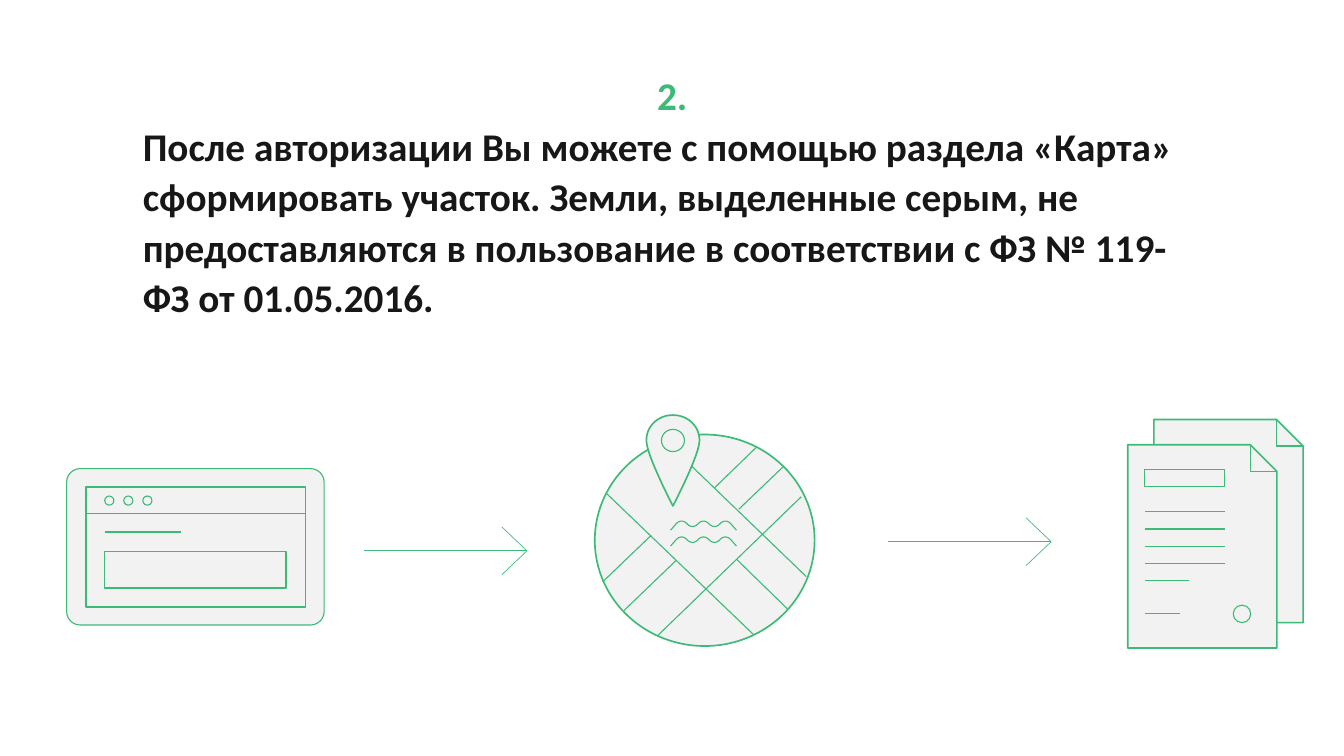
from lxml.etree import SubElement
from pptx import Presentation
from pptx.dml.color import RGBColor as RGB
from pptx.enum.shapes import MSO_CONNECTOR as Connector, MSO_SHAPE as Shape
from pptx.enum.text import MSO_AUTO_SIZE as AutoSize, PP_ALIGN as Align
from pptx.oxml.ns import qn
from pptx.util import Cm, Pt

THEME = {
    "green": RGB.from_string("3DBA78"),
    "ink": RGB.from_string("181717"),
    "paper": RGB.from_string("F2F2F2"),
    "font": {"name": "Calibri", "size": Pt(28), "bold": True},
    "hair": Pt(0.48),
    "thin": Pt(0.8),
    "medium": Pt(1.2),
}

SLIDE_SIZE = (33.87, 19.05)
STEP_FRAME = (3.35, 1.6, 27.18, 6.65)
STEP_TEXT = [
    ("2.", "green", Align.CENTER),
    (
        "После авторизации Вы можете с помощью раздела «Карта» сформировать участок. "
        "Земли, выделенные серым, не предоставляются в пользование в соответствии "
        "с ФЗ № 119-ФЗ от 01.05.2016.",
        "ink",
        Align.LEFT,
    ),
]

BROWSER = {
    "screen": (1.68, 11.81, 6.49, 3.94),
    "corner": 0.34,
    "window": (2.16, 12.27, 5.54, 3.02),
    "bar_height": 0.68,
    "buttons": (2.64, 12.5, 0.23),
    "button_step": 0.48,
    "button_count": 3,
    "label": (2.64, 13.41, 4.57, 13.41),
    "field": (2.64, 13.89, 4.57, 0.93),
}

MAP = {
    "globe": (14.99, 10.95, 5.54, 5.33),
    "roads": [
        (16.79, 11.13, 20.32, 14.53),
        (15.27, 12.42, 19, 16),
        (16.56, 16.03, 20.19, 12.52),
        (18.01, 12.29, 19.05, 11.28),
        (16.41, 13.49, 15.19, 14.66),
        (17.04, 14.12, 15.72, 15.39),
        (18.57, 14.1, 19.84, 15.34),
        (18.62, 12.83, 19.74, 11.76),
    ],
    "pin": {"x": 16.96, "top": 10.46, "shoulder": 11.1, "tip": 12.75, "half": 0.67},
    "hole": (16.67, 10.82, 0.58, 0.56),
    "wave": {"left": 17.04, "right": 18.42, "arcs": 5, "tail": 0.14, "drop": 0.16},
    "wave_levels": [13.2, 13.6],
}

DOCUMENT = {
    "sheets": [(29.08, 10.57), (28.42, 11.21)],
    "size": (3.76, 5.12),
    "fold": 0.67,
    "heading": (28.85, 11.84, 2.01, 0.43),
    "first_line": 12.9,
    "line_step": 0.43,
    "line_widths": [2.01, 2.01, 2.01, 2.01, 1.12],
    "signature": (28.85, 15.47, 29.74, 15.47),
    "seal": (31.08, 15.25, 0.44, 0.44),
}

ARROWS = [(9.18, 13.88), (22.39, 13.65)]
ARROW_LENGTH, HEAD_LENGTH, HEAD_HALF = 4.1, 0.63, 0.6


def paint(part, weight, fill=None):
    part.shadow.inherit = False
    part.line.color.rgb = THEME["green"]
    part.line.width = THEME[weight]
    if fill:
        part.fill.solid()
        part.fill.fore_color.rgb = THEME[fill]
    else:
        part.fill.background()
    return part


def draw_shape(icon, kind, frame, weight="thin", fill=None):
    return paint(icon.add_shape(kind, *map(Cm, frame)), weight, fill)


def draw_line(icon, ends, weight="thin"):
    stroke = icon.add_connector(Connector.STRAIGHT, *map(Cm, ends))
    stroke.line.color.rgb = THEME["green"]
    stroke.line.width = THEME[weight]
    SubElement(stroke._element.spPr, qn("a:effectLst"))


def draw_outline(icon, points, weight="thin", fill=None, close=False):
    start, *rest = [(Cm(x), Cm(y)) for x, y in points]
    builder = icon.build_freeform(*start, scale=1.0)
    builder.add_line_segments(rest, close=close)
    paint(builder.convert_to_shape(), weight, fill)


def curve(a, b, c, d, steps=12):
    times = [i / steps for i in range(1, steps + 1)]
    return [
        tuple(
            (1 - t) ** 3 * p + 3 * (1 - t) ** 2 * t * q + 3 * (1 - t) * t**2 * r + t**3 * s
            for p, q, r, s in zip(a, b, c, d)
        )
        for t in times
    ]


def pin_points(x, top, shoulder, tip, half):
    bend = half * 0.55
    right = curve((x, top), (x + bend, top), (x + half, shoulder - bend), (x + half, shoulder))
    right += curve((x + half, shoulder), (x + half, shoulder + bend), (x, tip), (x, tip))
    left = [(2 * x - px, py) for px, py in reversed(right[:-1])]
    return [(x, top)] + right + left


def wave_points(level, left, right, arcs, tail, drop):
    step = (right - left) / arcs
    points = [(left - tail, level + drop), (left, level)]
    for i in range(arcs):
        x = left + i * step
        bend = level + (0.09 if i % 2 else -0.09)
        points += curve((x, level), (x + 0.3 * step, bend), (x + 0.7 * step, bend), (x + step, level))
    return points + [(right + tail, level + drop)]


def draw_step(slide):
    frame = slide.shapes.add_textbox(*map(Cm, STEP_FRAME)).text_frame
    frame.word_wrap = True
    frame.auto_size = AutoSize.SHAPE_TO_FIT_TEXT
    for i, (wording, colour, align) in enumerate(STEP_TEXT):
        paragraph = frame.add_paragraph() if i else frame.paragraphs[0]
        paragraph.alignment = align
        paragraph.line_spacing = 1.07
        run = paragraph.add_run()
        run.text = wording
        for attribute, value in THEME["font"].items():
            setattr(run.font, attribute, value)
        run.font.color.rgb = THEME[colour]


def draw_browser(icon):
    screen = draw_shape(icon, Shape.ROUNDED_RECTANGLE, BROWSER["screen"], fill="paper")
    screen.adjustments[0] = BROWSER["corner"] / BROWSER["screen"][3]
    draw_shape(icon, Shape.RECTANGLE, BROWSER["window"], "medium")
    left, top, width, _ = BROWSER["window"]
    bar = top + BROWSER["bar_height"]
    draw_line(icon, (left, bar, left + width, bar))
    x, y, size = BROWSER["buttons"]
    for i in range(BROWSER["button_count"]):
        draw_shape(icon, Shape.OVAL, (x + i * BROWSER["button_step"], y, size, size))
    draw_shape(icon, Shape.RECTANGLE, BROWSER["field"])
    draw_line(icon, BROWSER["label"], "medium")


def draw_map(icon):
    draw_shape(icon, Shape.OVAL, MAP["globe"], "medium", "paper")
    for road in MAP["roads"]:
        draw_line(icon, road)
    draw_outline(icon, pin_points(**MAP["pin"]), "medium", "paper", close=True)
    draw_shape(icon, Shape.OVAL, MAP["hole"], fill="paper")
    for level in MAP["wave_levels"]:
        draw_outline(icon, wave_points(level, **MAP["wave"]))


def draw_document(icon):
    width, height = DOCUMENT["size"]
    fold = DOCUMENT["fold"]
    for left, top in DOCUMENT["sheets"]:
        right, bottom = left + width, top + height
        crease, corner = (right - fold, top), (right, top + fold)
        sheet = [(left, top), crease, corner, (right, bottom), (left, bottom)]
        draw_outline(icon, sheet, "medium", "paper", close=True)
        draw_outline(icon, [crease, (right - fold, top + fold), corner])
    draw_shape(icon, Shape.RECTANGLE, DOCUMENT["heading"])
    margin = DOCUMENT["heading"][0]
    for i, length in enumerate(DOCUMENT["line_widths"]):
        y = DOCUMENT["first_line"] + i * DOCUMENT["line_step"]
        draw_line(icon, (margin, y, margin + length, y))
    draw_line(icon, DOCUMENT["signature"])
    draw_shape(icon, Shape.OVAL, DOCUMENT["seal"])


def draw_arrows(icon):
    for start, y in ARROWS:
        tip = start + ARROW_LENGTH
        draw_line(icon, (start, y, tip, y), "hair")
        for side in (-HEAD_HALF, HEAD_HALF):
            draw_line(icon, (tip, y, tip - HEAD_LENGTH, y + side), "hair")


def main():
    deck = Presentation()
    deck.slide_width, deck.slide_height = map(Cm, SLIDE_SIZE)
    slide = deck.slides.add_slide(deck.slide_layouts[6])
    draw_step(slide)
    for draw in (draw_browser, draw_map, draw_document, draw_arrows):
        draw(slide.shapes.add_group_shape().shapes)
    deck.save("out.pptx")


if __name__ == "__main__":
    main()
